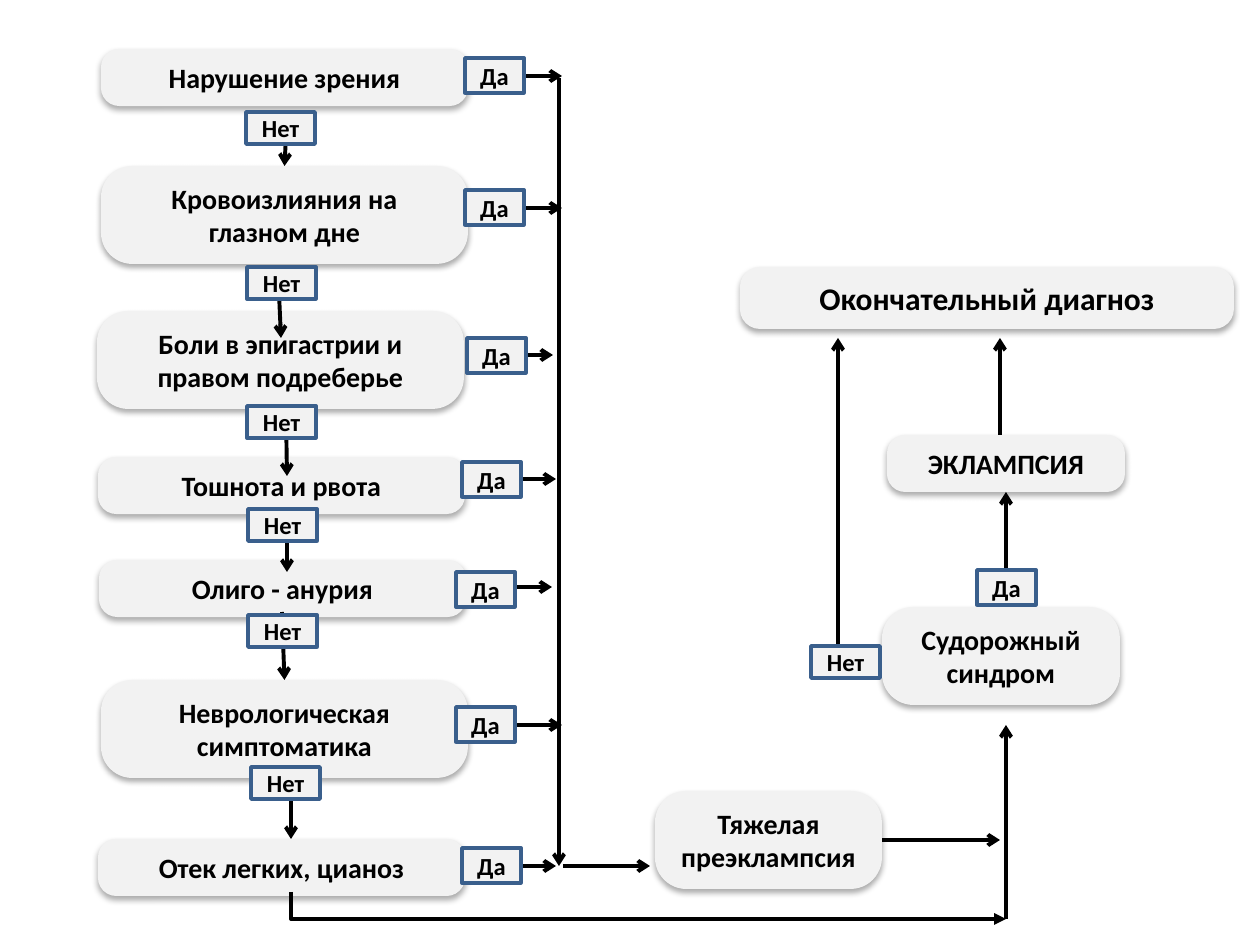
from lxml import etree
from pptx import Presentation
from pptx import util as u
from pptx.dml.color import RGBColor
from pptx.enum import shapes, text
from pptx.oxml.ns import qn

SCALE = 914400 / 126  # EMU per px
COLORS = {"fill": "F2F2F2", "border": "3A5F8C", "ink": "000000"}
STEP_WIDTH, ONE_LINE, TWO_LINES = 367, 57, 98
LABEL_SIZES = {"Да": (59, 35), "Нет": (69, 32)}
TOP, BOTTOM, RIGHT = 0, 2, 3

# Symptom steps: left, top, height, wording
STEPS = [
    (101, 49, ONE_LINE, "Нарушение зрения"),
    (101, 166, TWO_LINES, "Кровоизлияния на глазном дне"),
    (97, 311, TWO_LINES, "Боли в эпигастрии и правом подреберье"),
    (98, 457, ONE_LINE, "Тошнота и рвота"),
    (99, 560, ONE_LINE, "Олиго - анурия"),
    (101, 680, TWO_LINES, "Неврологическая симптоматика"),
    (98, 839, ONE_LINE, "Отек легких, цианоз"),
]
# Arrow start, arrow end, then left and top of the label
NO_BRANCHES = [
    ((287, 115), (285, 166), (246, 112)),
    ((278, 271), (281, 338), (247, 267)),
    ((286, 411), (287, 476), (247, 406)),
    ((287, 522), (287, 572), (248, 509)),
    ((282, 612), (285, 680), (248, 615)),
    ((291, 774), (291, 839), (251, 767)),
]
# Arrow start, then left and top of the label
YES_BRANCHES = [
    ((475, 76), (465, 58)),
    ((475, 208), (465, 190)),
    ((466, 355), (467, 338)),
    ((469, 479), (462, 462)),
    ((465, 587), (456, 572)),
    ((475, 725), (456, 707)),
    ((469, 866), (462, 848)),
]
YES_LENGTH = 87


def px(value):
    return u.Emu(round(value * SCALE))


def color(name):
    return RGBColor.from_string(COLORS[name])


def add_panel(page, kind, area, wording, size):
    box = page.shapes.add_shape(kind, *map(px, area))
    box.shadow.inherit = False
    box.fill.solid()
    box.fill.fore_color.rgb = color("fill")
    frame = box.text_frame
    frame.word_wrap = True
    para = frame.paragraphs[0]
    para.alignment = text.PP_ALIGN.CENTER
    span = para.add_run()
    span.text = wording
    span.font.name = "Calibri"
    span.font.size = u.Pt(size)
    span.font.bold = True
    span.font.color.rgb = color("ink")
    return box


def add_node(page, left, top, width, height, wording, size=16):
    box = add_panel(page, shapes.MSO_SHAPE.ROUNDED_RECTANGLE,
                    (left, top, width, height), wording, size)
    box.adjustments[0] = 0.32
    box.line.fill.background()
    box.text_frame.vertical_anchor = text.MSO_ANCHOR.TOP
    box.text_frame.auto_size = text.MSO_AUTO_SIZE.SHAPE_TO_FIT_TEXT
    # Soft shadow straight below
    effects = box._element.spPr.find(qn("a:effectLst"))
    shadow = etree.SubElement(effects, qn("a:outerShdw"), blurRad="44450",
                              dist="27940", dir="5400000", rotWithShape="0")
    tint = etree.SubElement(shadow, qn("a:srgbClr"), val=COLORS["ink"])
    etree.SubElement(tint, qn("a:alpha"), val="32000")
    return box


def add_label(page, left, top, wording):
    box = add_panel(page, shapes.MSO_SHAPE.RECTANGLE,
                    (left, top, *LABEL_SIZES[wording]), wording, 14)
    box.line.color.rgb = color("border")
    box.line.width = u.Pt(2)
    frame = box.text_frame
    frame.vertical_anchor = text.MSO_ANCHOR.MIDDLE
    frame.margin_left = frame.margin_right = 0


def add_arrow(page, start, end, head="arrow", kind=shapes.MSO_CONNECTOR.STRAIGHT):
    arrow = page.shapes.add_connector(kind, *map(px, (*start, *end)))
    arrow.line.color.rgb = color("ink")
    arrow.line.width = u.Pt(2.25)
    properties = arrow._element.spPr
    etree.SubElement(properties.find(qn("a:ln")), qn("a:tailEnd"), type=head)
    etree.SubElement(properties, qn("a:effectLst"))
    return arrow


def add_elbow(page, start, end):
    """Elbow that goes down first, then across."""
    elbow = add_arrow(page, start, end, "triangle", shapes.MSO_CONNECTOR.ELBOW)
    geometry = elbow._element.spPr.find(qn("a:prstGeom"))
    guides = geometry.find(qn("a:avLst"))
    if guides is None:
        guides = etree.SubElement(geometry, qn("a:avLst"))
    etree.SubElement(guides, qn("a:gd"), name="adj1", fmla="val 0")


def main():
    deck = Presentation()
    deck.slide_width, deck.slide_height = px(1260), px(945)
    page = deck.slides.add_slide(deck.slide_layouts[6])

    # Symptom steps and diagnosis boxes
    steps = [add_node(page, left, top, STEP_WIDTH, height, wording)
             for left, top, height, wording in STEPS]
    severe = add_node(page, 655, 791, 227, TWO_LINES, "Тяжелая преэклампсия")
    add_node(page, 740, 267, 494, 62, "Окончательный диагноз", 18)
    add_node(page, 882, 607, 238, TWO_LINES, "Судорожный синдром")
    eclampsia = add_node(page, 887, 435, 238, ONE_LINE, "ЭКЛАМПСИЯ")

    # "No" branches lead down to the next step
    no_arrows = [add_arrow(page, start, end) for start, end, _ in NO_BRANCHES]
    for index in (0, 4):
        no_arrows[index].end_connect(steps[index + 1], TOP)
    for _, _, corner in NO_BRANCHES:
        add_label(page, *corner, "Нет")

    # "Yes" branches lead right to the common line
    for (x, y), _ in YES_BRANCHES:
        add_arrow(page, (x, y), (x + YES_LENGTH, y))
    for _, corner in YES_BRANCHES:
        add_label(page, *corner, "Да")
    add_arrow(page, (559, 78), (559, 866))
    add_arrow(page, (563, 866), (650, 866))

    # Paths to the convulsive syndrome
    add_elbow(page, (291, 892), (1006, 919))
    add_arrow(page, (1006, 919), (1006, 725))
    add_arrow(page, (882, 840), (1000, 840)).begin_connect(severe, RIGHT)

    # Paths to the final diagnosis
    add_arrow(page, (1006, 607), (1006, 492)).end_connect(eclampsia, BOTTOM)
    add_label(page, 977, 570, "Да")
    add_label(page, 811, 646, "Нет")
    add_arrow(page, (838, 644), (838, 338))
    add_arrow(page, (1000, 435), (1000, 338))

    deck.save("out.pptx")


if __name__ == "__main__":
    main()
